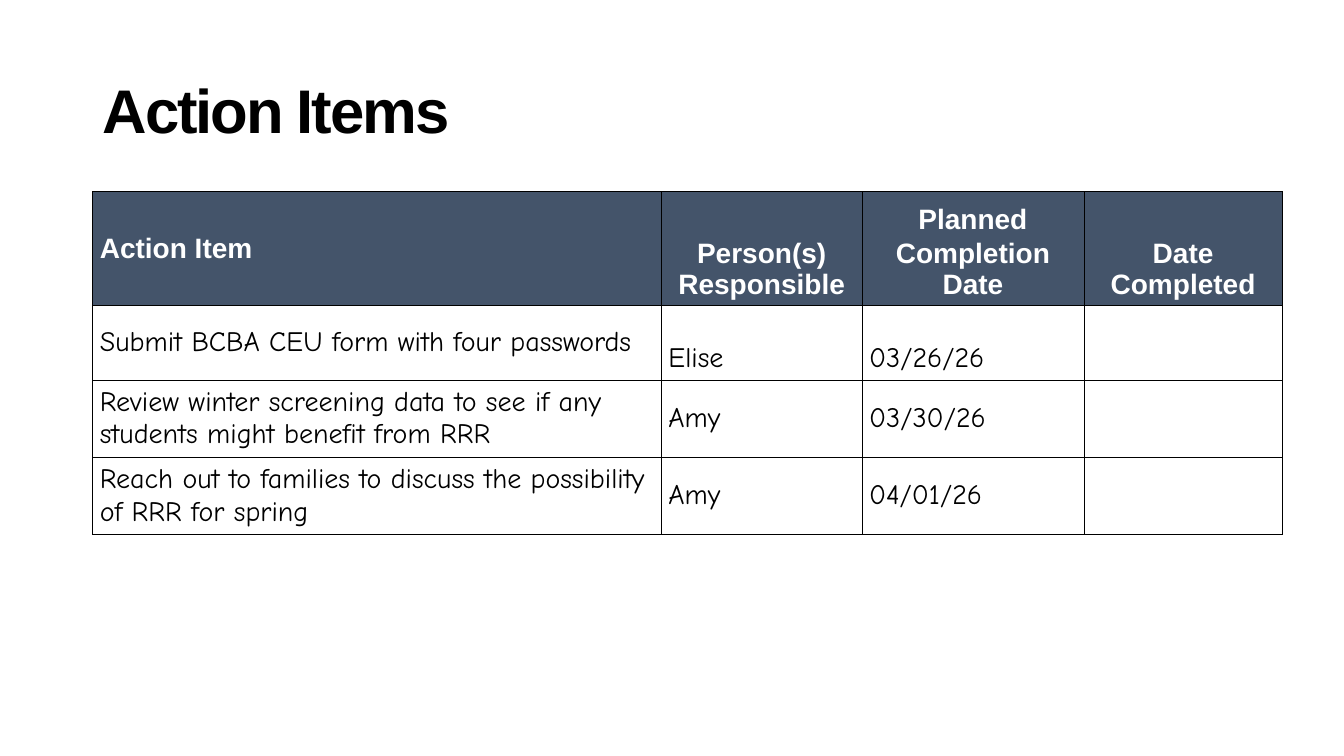
import pptx
import pptx.util
import pptx.dml.color
import pptx.enum.text
import pptx.oxml.ns
from lxml import etree

Inches = pptx.util.Inches
Pt = pptx.util.Pt
RGBColor = pptx.dml.color.RGBColor
ANCHOR = pptx.enum.text.MSO_ANCHOR
ALIGN = pptx.enum.text.PP_ALIGN
qn = pptx.oxml.ns.qn

BLACK = RGBColor(0x00, 0x00, 0x00)
WHITE = RGBColor(0xFF, 0xFF, 0xFF)
SLATE = RGBColor(0x44, 0x54, 0x6A)
HEADING_FONT = "Arial"
BODY_FONT = "Comic Neue"

COLUMN_WIDTHS = [5.64, 1.99, 2.2, 1.97]
ROW_HEIGHTS = [1.05, 0.74, 0.74, 0.74]
HEADERS = [
    ["Action Item"],
    ["Person(s) Responsible"],
    ["Planned", "Completion Date"],
    ["Date Completed"],
]
ACTIONS = [
    ("Submit BCBA CEU form with four passwords", "Elise", "03/26/26", ""),
    ("Review winter screening data to see if any students might benefit from RRR",
     "Amy", "03/30/26", ""),
    ("Reach out to families to discuss the possibility of RRR for spring",
     "Amy", "04/01/26", ""),
]


def add_span(para, text, font, size, color, bold=False):
    span = para.add_run()
    span.text = text
    span.font.name = font
    span.font.size = Pt(size)
    span.font.bold = bold
    span.font.color.rgb = color
    return span


def add_title(page, left, top, width, height):
    box = page.shapes.add_textbox(Inches(left), Inches(top), Inches(width), Inches(height))
    frame = box.text_frame
    frame.word_wrap = True
    frame.vertical_anchor = ANCHOR.MIDDLE
    para = frame.paragraphs[0]
    para.line_spacing = 0.9
    span = add_span(para, "Action Items", HEADING_FONT, 44, BLACK, bold=True)
    # Tighter letter spacing, in hundredths of a point
    span.font._element.set("spc", "-150")


def style_cell(cell, anchor):
    cell.vertical_anchor = anchor
    cell.margin_left = cell.margin_right = Inches(0.07)
    cell.margin_top = cell.margin_bottom = Inches(0.05)
    # Thin black border on every side
    properties = cell._tc.get_or_add_tcPr()
    for side in ("a:lnL", "a:lnR", "a:lnT", "a:lnB"):
        line = etree.SubElement(properties, qn(side), w=str(Pt(0.5)))
        fill = etree.SubElement(line, qn("a:solidFill"))
        etree.SubElement(fill, qn("a:srgbClr"), val=str(BLACK))


def fill_header_cell(cell, lines, is_first):
    style_cell(cell, ANCHOR.MIDDLE if is_first else ANCHOR.BOTTOM)
    cell.fill.solid()
    cell.fill.fore_color.rgb = SLATE
    frame = cell.text_frame
    for index, text in enumerate(lines):
        para = frame.add_paragraph() if index else frame.paragraphs[0]
        para.alignment = ALIGN.LEFT if is_first else ALIGN.CENTER
        para.space_before = Pt(1 if index else 0)
        para.space_after = Pt(1)
        add_span(para, text, HEADING_FONT, 20, WHITE, bold=True)


def fill_action_cell(cell, text, anchor):
    style_cell(cell, anchor)
    cell.fill.background()
    if text:
        add_span(cell.text_frame.paragraphs[0], text, BODY_FONT, 20, BLACK)


def add_action_table(page, left, top):
    table = page.shapes.add_table(
        len(ROW_HEIGHTS), len(COLUMN_WIDTHS), Inches(left), Inches(top),
        Inches(sum(COLUMN_WIDTHS)), Inches(sum(ROW_HEIGHTS))).table
    table.first_row = table.horz_banding = False
    for column, width in zip(table.columns, COLUMN_WIDTHS):
        column.width = Inches(width)
    for row, height in zip(table.rows, ROW_HEIGHTS):
        row.height = Inches(height)

    # Header row
    for column, lines in enumerate(HEADERS):
        fill_header_cell(table.cell(0, column), lines, column == 0)

    # Action rows; the first row sets its name and date low
    for row, action in enumerate(ACTIONS, start=1):
        for column, text in enumerate(action):
            low = row == 1 and column > 0
            fill_action_cell(table.cell(row, column), text,
                             ANCHOR.BOTTOM if low else ANCHOR.MIDDLE)


def main():
    deck = pptx.Presentation()
    deck.slide_width = Inches(13.33)
    deck.slide_height = Inches(7.5)
    page = deck.slides.add_slide(deck.slide_layouts[6])
    add_title(page, 0.92, 0.4, 11.5, 1.45)
    add_action_table(page, 0.92, 1.9)
    deck.save("out.pptx")


if __name__ == "__main__":
    main()
